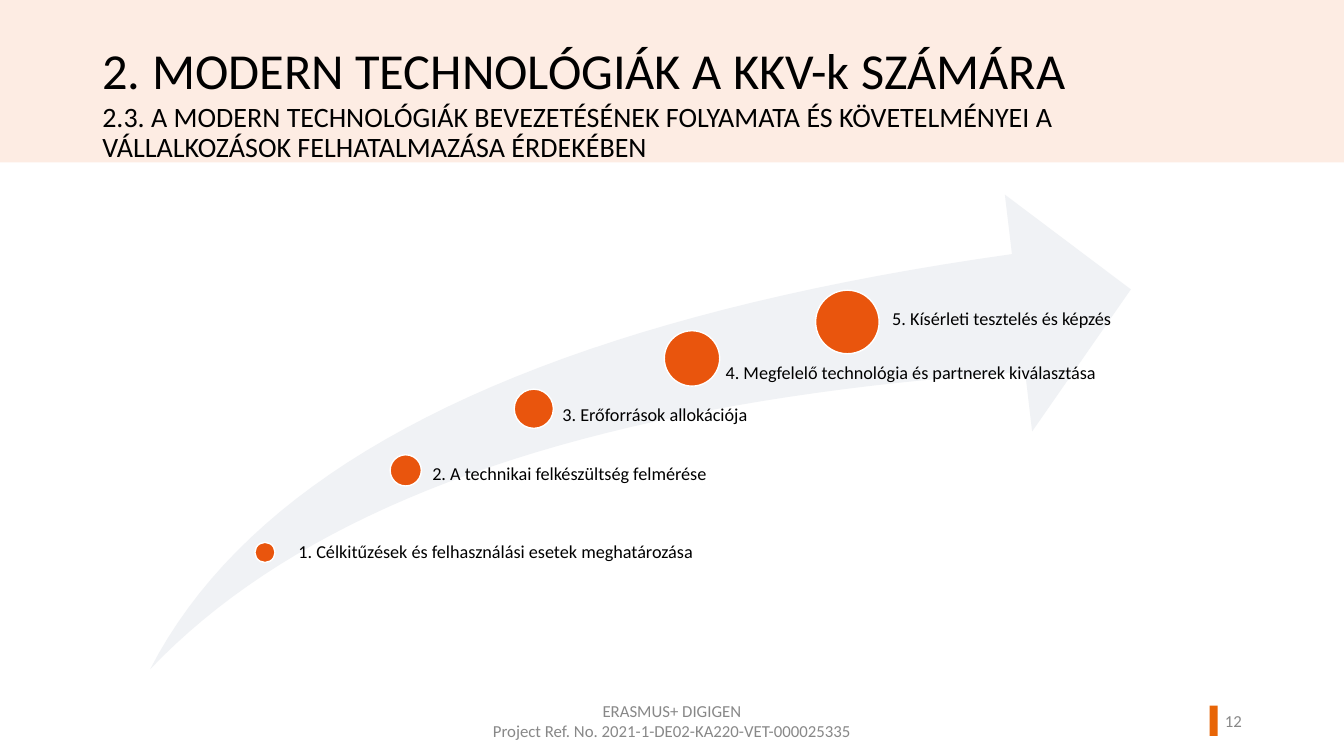
from collections import namedtuple
from dataclasses import dataclass

from pptx import Presentation
from pptx.dml.color import RGBColor
from pptx.enum.shapes import MSO_SHAPE
from pptx.enum.text import MSO_ANCHOR, MSO_AUTO_SIZE, PP_ALIGN
from pptx.util import Pt

RECTANGLE, CIRCLE = MSO_SHAPE.RECTANGLE, MSO_SHAPE.OVAL
TOP, MIDDLE = MSO_ANCHOR.TOP, MSO_ANCHOR.MIDDLE
LEFT, CENTER, RIGHT = PP_ALIGN.LEFT, PP_ALIGN.CENTER, PP_ALIGN.RIGHT
NO_AUTOFIT = MSO_AUTO_SIZE.NONE
TITLE_ONLY = 5
CURVE_STEPS = 40

Box = namedtuple("Box", "left top width height")
Stage = namedtuple("Stage", "label center diameter label_box inset")


@dataclass(frozen=True)
class Theme:
    font: str = "Calibri"
    band: str = "FDECE3"
    accent: str = "E86507"
    marker: str = "E9550D"
    arrow: str = "F0F2F5"
    outline: str = "FFFFFF"
    ink: str = "000000"
    muted: str = "888888"
    title_size: int = 36
    subtitle_size: int = 20
    stage_size: int = 13
    footer_size: int = 12


THEME = Theme()
SLIDE = Box(0, 0, 960, 540)
HEADER = Box(0, 0, 960, 116)
PROCESS = Box(107.3, 139, 700.5, 339)
FOOTER = Box(318, 500.4, 576, 28.8)

STAGES = [
    Stage("1. Célkitűzések és felhasználási esetek meghatározása",
          (82, 255.6), 14.4, Box(99.4, 248.4, 307.4, 33), 6.5),
    Stage("2. A technikai felkészültség felmérése",
          (182.5, 197), 22.3, Box(191.5, 193, 249, 32.4), 10),
    Stage("3. Erőforrások allokációja",
          (274, 153), 28, Box(280.8, 150.5, 216.7, 39.6), 13.7),
    Stage("4. Megfelelő technológia és partnerek kiválasztása",
          (387, 117), 39.6, Box(393, 121, 303, 30.2), 18),
    Stage("5. Kísérleti tesztelés és képzés",
          (498, 91), 45.4, Box(507, 82, 214.6, 52.6), 23),
]


def apply(target, values):
    for name, value in values.items():
        setattr(target, name, value)


def within(box, part):
    return Box(box.left + part.left, box.top + part.top, part.width, part.height)


def lengths(box):
    return [Pt(length) for length in box]


def paint(shape, fill, outline=None):
    shape.shadow.inherit = False
    shape.fill.solid()
    shape.fill.fore_color.rgb = RGBColor.from_string(fill)
    if outline:
        shape.line.color.rgb = RGBColor.from_string(outline)
        shape.line.width = Pt(1)
    else:
        shape.line.fill.background()


def add_figure(shapes, kind, box, fill, outline=None):
    paint(shapes.add_shape(kind, *lengths(box)), fill, outline)


def write(holder, lines, size, color, align=LEFT, anchor=TOP,
          insets=(7.2, 3.6, 7.2, 3.6), spacing=0.9):
    frame = holder.text_frame
    margins = zip(("margin_left", "margin_top", "margin_right", "margin_bottom"), insets)
    apply(frame, {"word_wrap": True, "auto_size": NO_AUTOFIT,
                  "vertical_anchor": anchor,
                  **{side: Pt(inset) for side, inset in margins}})
    frame.text = "\n".join(lines)
    for paragraph in frame.paragraphs:
        apply(paragraph, {"alignment": align, "line_spacing": spacing})
        for run in paragraph.runs:
            apply(run.font, {"name": THEME.font, "size": Pt(size)})
            run.font.color.rgb = RGBColor.from_string(color)


def add_text(shapes, box, lines, size, color, **layout):
    write(shapes.add_textbox(*lengths(box)), lines, size, color, **layout)


def bezier(start, first, second, end):
    points = []
    for step in range(1, CURVE_STEPS + 1):
        t = step / CURVE_STEPS
        weights = ((1 - t) ** 3, 3 * t * (1 - t) ** 2, 3 * t * t * (1 - t), t ** 3)
        points.append(tuple(
            sum(weight * value for weight, value in zip(weights, axis))
            for axis in zip(start, first, second, end)))
    return points


def build_header(slide, box):
    add_figure(slide.shapes, RECTANGLE, box, THEME.band)
    title = slide.shapes.title
    title_box = within(box, Box(66, 29.5, 803.5, 61))
    apply(title, dict(zip(Box._fields, lengths(title_box))))
    write(title, ["2. MODERN TECHNOLÓGIÁK A KKV-k SZÁMÁRA"],
          THEME.title_size, THEME.ink)
    slide.shapes._spTree.append(title._element)
    add_text(slide.shapes, within(box, Box(66, 70, 781, 46)),
             ["2.3. A MODERN TECHNOLÓGIÁK BEVEZETÉSÉNEK FOLYAMATA ÉS "
              "KÖVETELMÉNYEI A VÁLLALKOZÁSOK FELHATALMAZÁSA ÉRDEKÉBEN"],
             THEME.subtitle_size, THEME.ink)


def build_arrow(shapes, box):
    tail, upper_neck, lower_neck = (0, 339), (615.6, 42.5), (625, 126.7)
    outline = [
        *bezier(tail, (77.8, 188), (283, 89.3), upper_neck),
        (610.5, 0), (700.5, 67.7), (630, 169.2), lower_neck,
        *bezier(lower_neck, (324.7, 146.2), (116.6, 216.7), tail),
    ]
    placed = [(Pt(box.left + x), Pt(box.top + y)) for x, y in [tail, *outline]]
    builder = shapes.build_freeform(*placed[0])
    builder.add_line_segments(placed[1:], close=True)
    paint(builder.convert_to_shape(), THEME.arrow)


def build_process(slide, box):
    shapes = slide.shapes.add_group_shape().shapes
    build_arrow(shapes, box)
    for stage in STAGES:
        x, y = stage.center
        radius = stage.diameter / 2
        marker = Box(x - radius, y - radius, stage.diameter, stage.diameter)
        add_figure(shapes, CIRCLE, within(box, marker), THEME.marker, THEME.outline)
        add_text(shapes, within(box, stage.label_box), [stage.label],
                 THEME.stage_size, THEME.ink, insets=(stage.inset, 0, 0, 0))


def build_footer(slide, box):
    add_figure(slide.shapes, RECTANGLE, within(box, Box(546, 3.6, 5.8, 21.6)),
               THEME.accent)
    add_text(slide.shapes, within(box, Box(0, 0, 324, box.height)),
             ["ERASMUS+ DIGIGEN", "Project Ref. No. 2021-1-DE02-KA220-VET-000025335"],
             THEME.footer_size, THEME.muted, align=CENTER, anchor=MIDDLE, spacing=1.0)
    add_text(slide.shapes, within(box, Box(529.4, 0, 46.8, box.height)), ["12"],
             THEME.footer_size, THEME.muted, align=RIGHT, anchor=MIDDLE, spacing=1.0)


def main():
    deck = Presentation()
    apply(deck, {"slide_width": Pt(SLIDE.width), "slide_height": Pt(SLIDE.height)})
    slide = deck.slides.add_slide(deck.slide_layouts[TITLE_ONLY])
    build_header(slide, HEADER)
    build_process(slide, PROCESS)
    build_footer(slide, FOOTER)
    deck.save("out.pptx")


if __name__ == "__main__":
    main()
